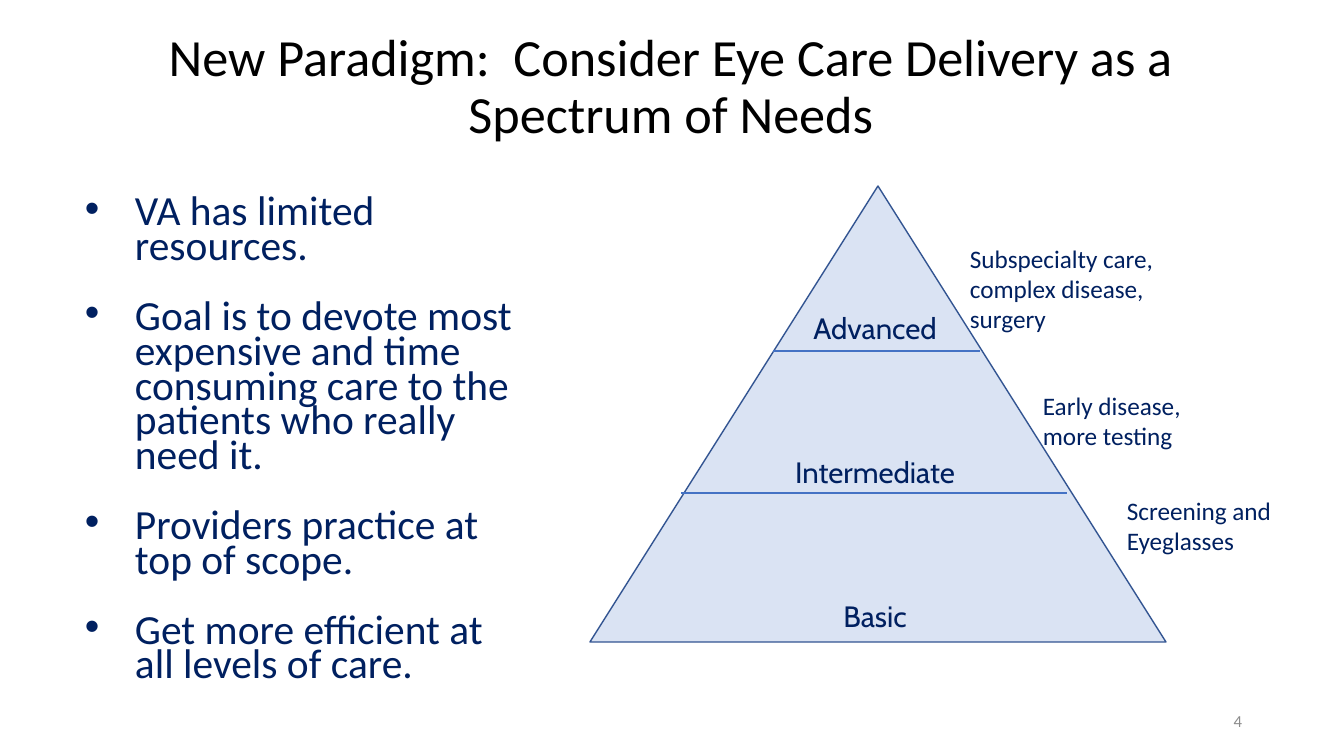
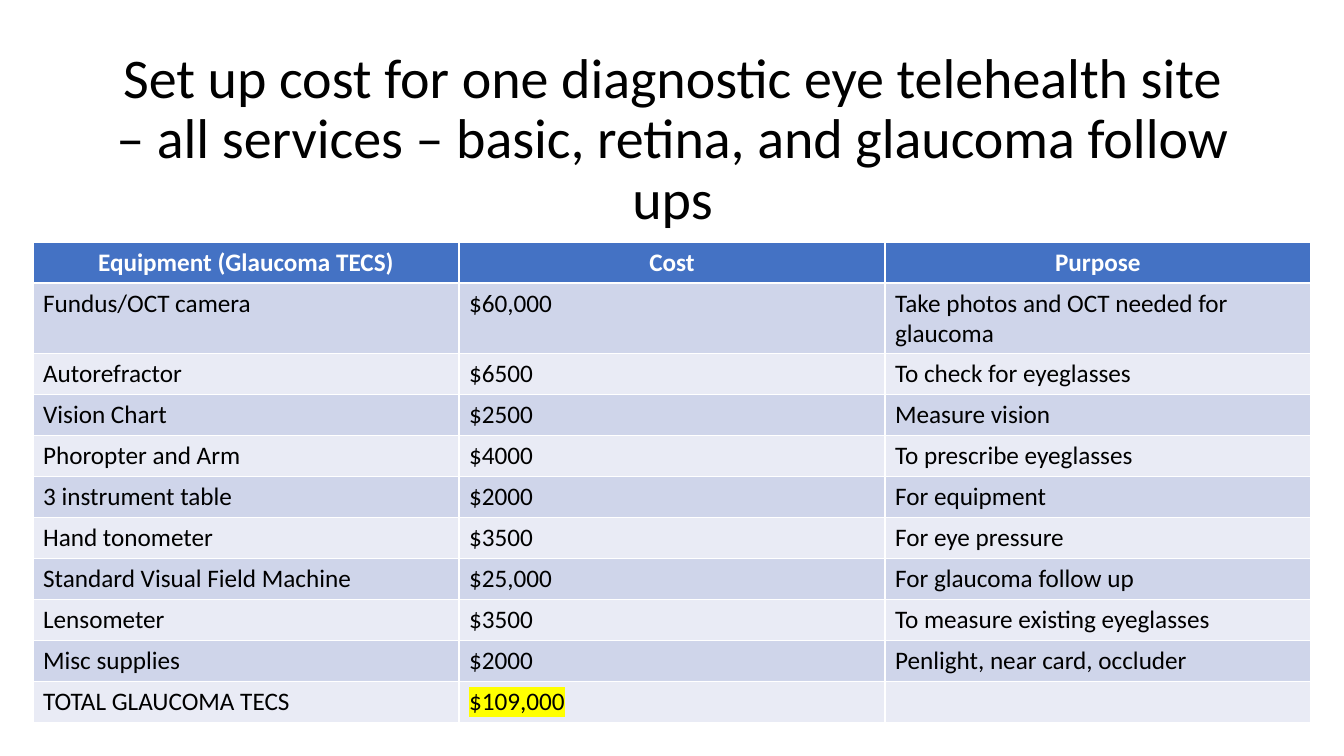
from dataclasses import dataclass

from lxml.etree import SubElement
from pptx import Presentation
from pptx.dml.color import RGBColor as Rgb
from pptx.enum.shapes import MSO_CONNECTOR as Link, MSO_SHAPE as Shape
from pptx.enum.text import MSO_ANCHOR as Anchor, PP_ALIGN as Align
from pptx.oxml.ns import qn
from pptx.util import Pt

PX = 914400 / 100.8


@dataclass(frozen=True)
class Theme:
    font: str = "Calibri"
    accent_font: str = "Cabin"
    black: str = "000000"
    white: str = "FFFFFF"
    navy: str = "002060"
    blue: str = "4472C4"
    edge: str = "325491"
    pale: str = "DAE3F3"
    grey: str = "8C8C8C"
    mark: str = "FFFF00"
    bands: tuple = ("CFD5EA", "E9EBF5")
    body: float = 29.6
    level: int = 21
    text: int = 18
    small: int = 12


def emu(*sizes):
    return [round(size * PX) for size in sizes]


class Deck:
    """Holds the theme and the slide being filled."""

    def __init__(self, theme):
        self.theme = theme
        self.file = Presentation()
        self.file.slide_width, self.file.slide_height = emu(1344, 756)
        self.slide = None

    def add_slide(self):
        self.slide = self.file.slides.add_slide(self.file.slide_layouts[6])

    def style(self, frame, size, color, align=Align.LEFT, font=None, bold=False):
        for para in frame.paragraphs:
            para.alignment = align
            for run in para.runs:
                run.font.name = font or self.theme.font
                run.font.size = Pt(size)
                run.font.bold = bold
                run.font.color.rgb = Rgb.from_string(color)

    def text(self, box, text, size, color, anchor=Anchor.TOP, **look):
        frame = self.slide.shapes.add_textbox(*emu(*box)).text_frame
        frame.word_wrap = True
        frame.vertical_anchor = anchor
        frame.text = text
        self.style(frame, size, color, **look)
        return frame

    def title(self, box, text, size):
        frame = self.text(box, text, size, self.theme.black,
                          anchor=Anchor.MIDDLE, align=Align.CENTER)
        frame.paragraphs[0].line_spacing = 0.9

    def bullets(self, box, items):
        frame = self.text(box, "\n".join(items), self.theme.body, self.theme.navy)
        indent = emu(50)[0]
        for i, para in enumerate(frame.paragraphs):
            para.line_spacing = 0.7
            para.space_before = Pt(25 if i else 0)
            props = para._p.get_or_add_pPr()
            props.set("marL", str(indent))
            props.set("indent", str(-indent))
            SubElement(props, qn("a:buFont"), typeface="Arial")
            SubElement(props, qn("a:buChar"), char="•")

    def pyramid(self, box):
        shape = self.slide.shapes.add_shape(Shape.ISOSCELES_TRIANGLE, *emu(*box))
        shape.shadow.inherit = False
        shape.fill.solid()
        shape.fill.fore_color.rgb = Rgb.from_string(self.theme.pale)
        shape.line.color.rgb = Rgb.from_string(self.theme.edge)
        shape.line.width = Pt(1)

    def rule(self, left, right, y):
        line = self.slide.shapes.add_connector(
            Link.STRAIGHT, *emu(left, y, right, y))
        line.line.color.rgb = Rgb.from_string(self.theme.blue)
        line.line.width = Pt(2)
        SubElement(line._element.spPr, qn("a:effectLst"))

    def number(self, value):
        self.text((950, 701, 302, 40), value, self.theme.small, self.theme.grey,
                  anchor=Anchor.MIDDLE, align=Align.RIGHT)

    def table(self, left, top, width, height, rows):
        """Draw a header row over banded rows; height is that of one row."""
        grid = self.slide.shapes.add_table(
            len(rows), len(rows[0]),
            *emu(left, top, width, height * len(rows))).table
        for r, row in enumerate(rows):
            grid.rows[r].height = emu(height)[0]
            for c, text in enumerate(row):
                self.cell(grid.cell(r, c), text, r)
        return grid

    def cell(self, cell, text, r):
        theme = self.theme
        cell.text_frame.text = text
        cell.fill.solid()
        fill = theme.bands[(r - 1) % 2] if r else theme.blue
        cell.fill.fore_color.rgb = Rgb.from_string(fill)
        self.style(cell.text_frame, theme.text,
                   theme.black if r else theme.white,
                   align=Align.LEFT if r else Align.CENTER, bold=not r)

    def mark(self, cell):
        """Highlight the text of a cell."""
        props = cell.text_frame.paragraphs[0].runs[0]._r.get_or_add_rPr()
        light = SubElement(props, qn("a:highlight"))
        SubElement(light, qn("a:srgbClr"), val=self.theme.mark)
        props.find(qn("a:solidFill")).addnext(light)


GOALS = [
    "VA has limited resources.",
    "Goal is to devote most expensive and time consuming care to the "
    "patients who really need it.",
    "Providers practice at top of scope.",
    "Get more efficient at all levels of care.",
]
LEVELS = ["Advanced", "Intermediate", "Basic"]
NOTES = [
    ((960, 238, 251, 102), "Subspecialty care, complex disease, surgery"),
    ((1033, 385, 202, 72), "Early disease, more testing"),
    ((1117, 490, 227, 72), "Screening and Eyeglasses"),
]
COSTS = [
    ("Equipment (Glaucoma TECS)", "Cost", "Purpose"),
    ("Fundus/OCT camera", "$60,000", "Take photos and OCT needed for glaucoma"),
    ("Autorefractor", "$6500", "To check for eyeglasses"),
    ("Vision Chart", "$2500", "Measure vision"),
    ("Phoropter and Arm", "$4000", "To prescribe eyeglasses"),
    ("3 instrument table", "$2000", "For equipment"),
    ("Hand tonometer", "$3500", "For eye pressure"),
    ("Standard Visual Field Machine", "$25,000", "For glaucoma follow up"),
    ("Lensometer", "$3500", "To measure existing eyeglasses"),
    ("Misc supplies", "$2000", "Penlight, near card, occluder"),
    ("TOTAL GLAUCOMA TECS", "$109,000", ""),
]


def add_needs(deck):
    theme = deck.theme
    deck.add_slide()
    deck.title((95, 15, 1152, 146),
               "New Paradigm:  Consider Eye Care Delivery as a Spectrum of Needs",
               37.3)
    deck.bullets((75, 193, 463, 528), GOALS)
    deck.pyramid((590, 186, 576, 456))
    deck.rule(773, 980, 351)
    deck.rule(681, 1067, 493)
    for i, level in enumerate(LEVELS):
        deck.text((771, 305 + 144 * i, 208, 45), level, theme.level, theme.navy,
                  align=Align.CENTER, font=theme.accent_font)
    for box, note in NOTES:
        deck.text(box, note, theme.text, theme.navy)
    deck.number("4")


def add_costs(deck):
    deck.add_slide()
    deck.title((93, 76, 1159, 129),
               "Set up cost for one diagnostic eye telehealth site – all services "
               "– basic, retina, and glaucoma follow ups", 40)
    grid = deck.table(33, 242, 1278, 41, COSTS)
    deck.mark(grid.cell(len(COSTS) - 1, 1))


def main():
    deck = Deck(Theme())
    add_needs(deck)
    add_costs(deck)
    deck.file.save("out.pptx")


if __name__ == "__main__":
    main()
